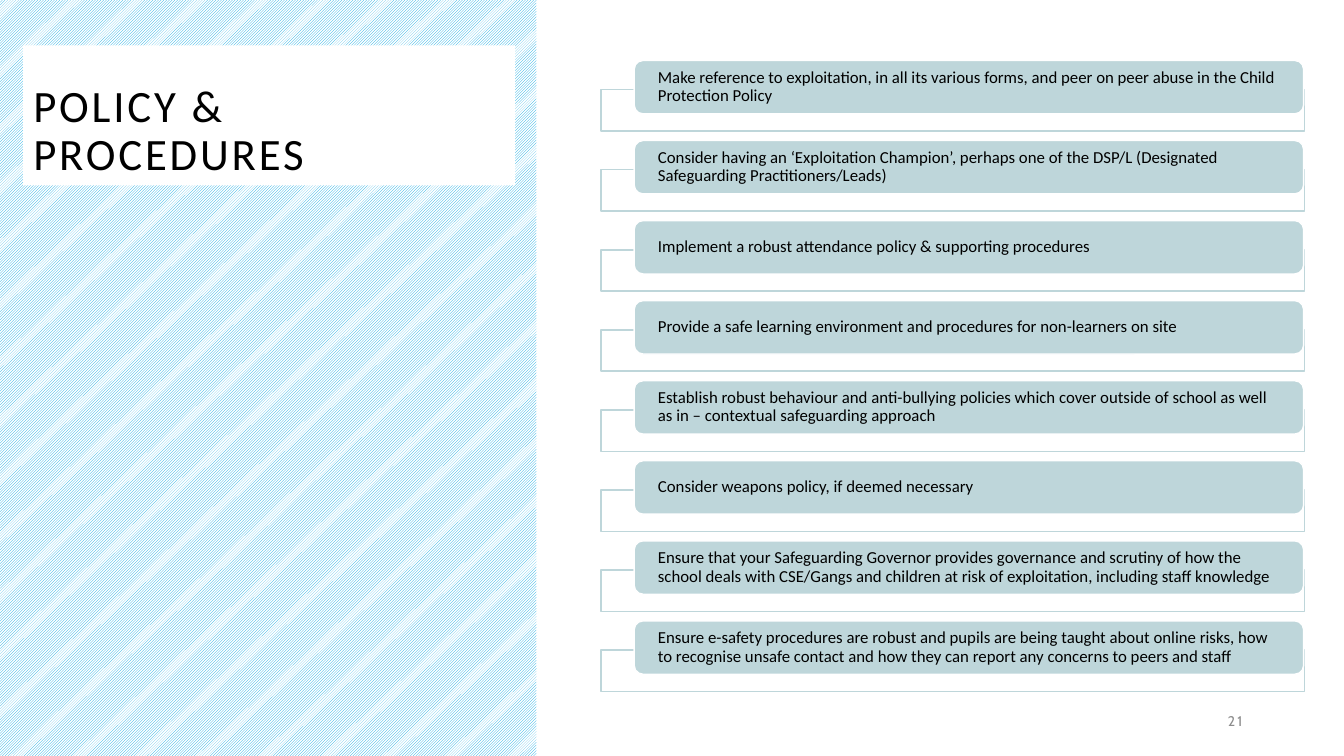
from pptx import Presentation
from pptx.dml.color import RGBColor
from pptx.enum.dml import MSO_PATTERN
from pptx.enum.shapes import MSO_SHAPE as SHAPE
from pptx.enum.text import MSO_ANCHOR as ANCHOR, MSO_AUTO_SIZE as AUTO, PP_ALIGN as ALIGN
from pptx.util import Inches, Pt

BLACK = RGBColor(0x00, 0x00, 0x00)
WHITE = RGBColor(0xFF, 0xFF, 0xFF)
BLUE = RGBColor(0x00, 0xA4, 0xE2)
TEAL = RGBColor(0xBE, 0xD6, 0xDA)
GREY = RGBColor(0x8C, 0x8C, 0x8C)

TITLE = "POLICY & PROCEDURES"
PAGE = "21"
POLICIES = [
    "Make reference to exploitation, in all its various forms, and peer on peer abuse in the Child Protection Policy",
    "Consider having an ‘Exploitation Champion’, perhaps one of the DSP/L (Designated Safeguarding Practitioners/Leads)",
    "Implement a robust attendance policy & supporting procedures",
    "Provide a safe learning environment and procedures for non-learners on site",
    "Establish robust behaviour and anti-bullying policies which cover outside of school as well as in – contextual safeguarding approach",
    "Consider weapons policy, if deemed necessary",
    "Ensure that your Safeguarding Governor provides governance and scrutiny of how the school deals with CSE/Gangs and children at risk of exploitation, including staff knowledge",
    "Ensure e-safety procedures are robust and pupils are being taught about online risks, how to recognise unsafe contact and how they can report any concerns to peers and staff",
]

FIRST_TOP, LAST_TOP = 0.6, 6.16
PITCH = (LAST_TOP - FIRST_TOP) / (len(POLICIES) - 1)
FRAME_DROP = 0.29

TITLE_FONT = {"name": "Calibri", "size": Pt(32), "color": BLACK, "spc": 200}
POLICY_FONT = {"name": "Calibri", "size": Pt(12), "color": BLACK}
PAGE_FONT = {"name": "Cabin", "size": Pt(10), "color": GREY, "spc": 150}
TITLE_FRAME = {"vertical_anchor": ANCHOR.BOTTOM, "word_wrap": True, "auto_size": AUTO.NONE}
POLICY_FRAME = {"vertical_anchor": ANCHOR.MIDDLE, "word_wrap": True,
                "margin_left": Inches(0.21), "margin_right": Inches(0.21),
                "margin_top": 0, "margin_bottom": 0}
PAGE_FRAME = {"vertical_anchor": ANCHOR.MIDDLE, "word_wrap": True}


def add_box(s, shape, at, fill, line):
    sp = s.shapes.add_shape(shape, *map(Inches, at))
    sp.shadow.inherit = False
    sp.fill.solid()
    sp.fill.fore_color.rgb = fill
    sp.line.color.rgb = line
    sp.line.width = Pt(1)
    return sp


def write(sp, text, frame, font, align=ALIGN.LEFT, spacing=0.9):
    tf = sp.text_frame
    for name, value in frame.items():
        setattr(tf, name, value)
    p = tf.paragraphs[0]
    p.alignment = align
    p.line_spacing = spacing
    r = p.add_run()
    r.text = text
    for name, value in font.items():
        if name == "color":
            r.font.color.rgb = value
        elif name == "spc":
            r._r.get_or_add_rPr().set("spc", str(value))
        else:
            setattr(r.font, name, value)


def main():
    prs = Presentation()
    prs.slide_width, prs.slide_height = Inches(13.33), Inches(7.5)
    s = prs.slides.add_slide(prs.slide_layouts[5])

    panel = s.shapes.add_shape(SHAPE.RECTANGLE, 0, 0, Inches(5.32), Inches(7.58))
    panel.shadow.inherit = False
    panel.fill.patterned()
    panel.fill.pattern = MSO_PATTERN.LIGHT_UPWARD_DIAGONAL
    panel.fill.fore_color.rgb = BLUE
    panel.fill.back_color.rgb = WHITE
    panel.line.fill.background()

    title = s.shapes.title
    panel._element.addnext(title._element)
    title.left, title.top, title.width, title.height = map(Inches, (0.23, 0.45, 4.88, 1.39))
    title.fill.solid()
    title.fill.fore_color.rgb = WHITE
    write(title, TITLE, TITLE_FRAME, TITLE_FONT)

    page = s.shapes.add_textbox(*map(Inches, (9.42, 6.95, 3, 0.4)))
    write(page, PAGE, PAGE_FRAME, PAGE_FONT, ALIGN.RIGHT, 1.0)

    for i, policy in enumerate(POLICIES):
        top = FIRST_TOP + i * PITCH
        add_box(s, SHAPE.RECTANGLE, (5.96, top + FRAME_DROP, 6.98, 0.41), WHITE, TEAL)
        bar = add_box(s, SHAPE.ROUNDED_RECTANGLE, (6.29, top, 6.64, 0.53), TEAL, WHITE)
        write(bar, policy, POLICY_FRAME, POLICY_FONT)

    prs.save("out.pptx")


if __name__ == "__main__":
    main()
